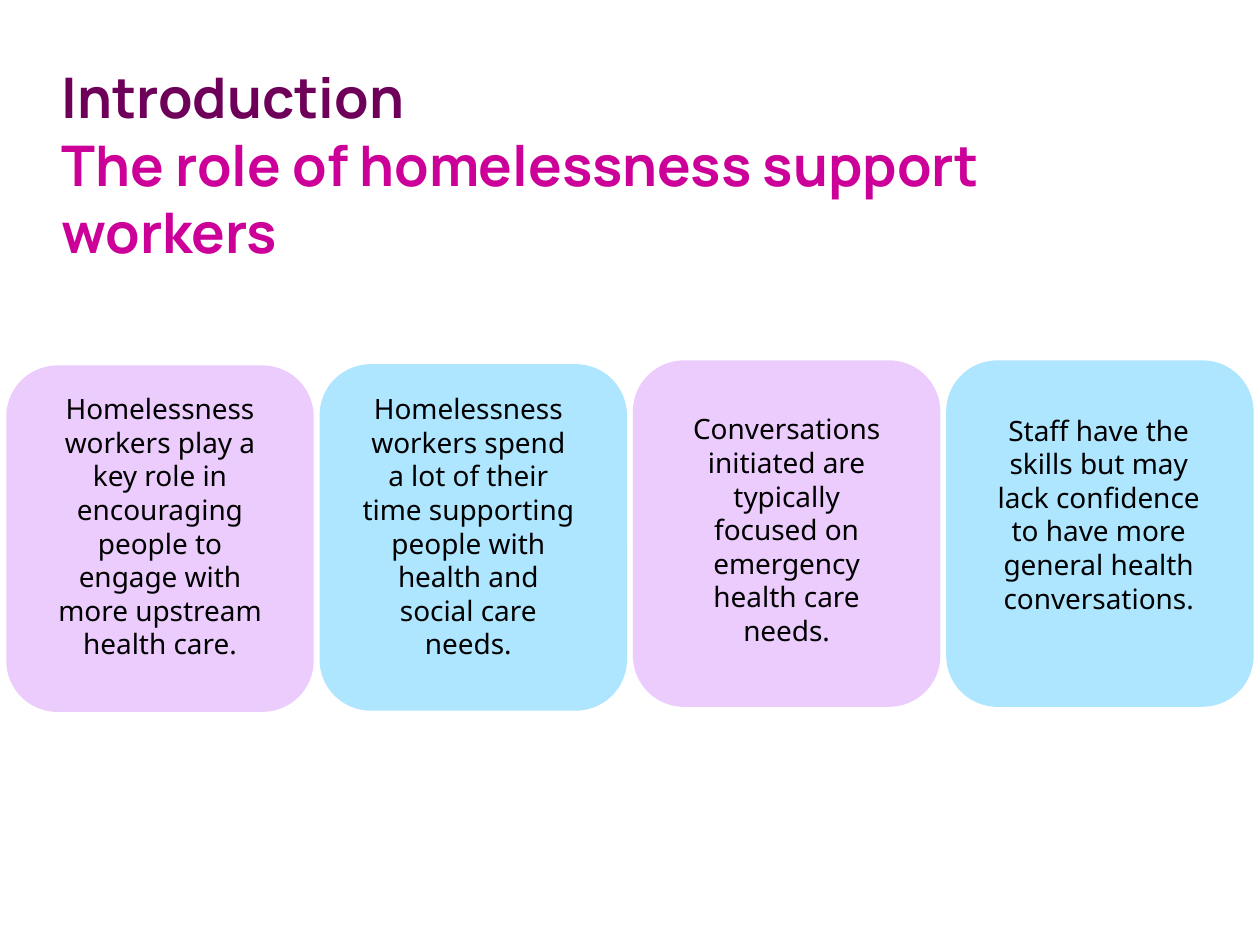
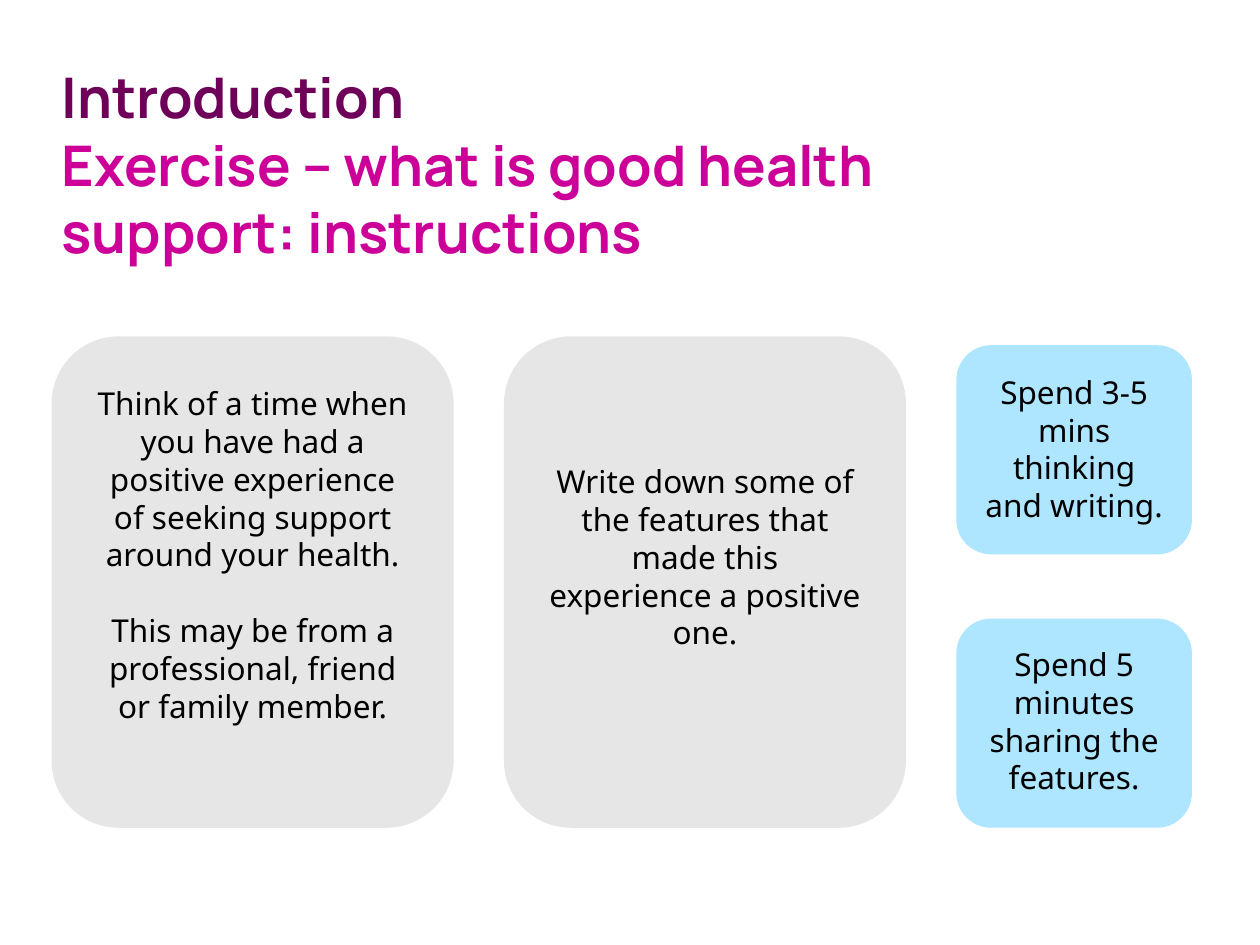
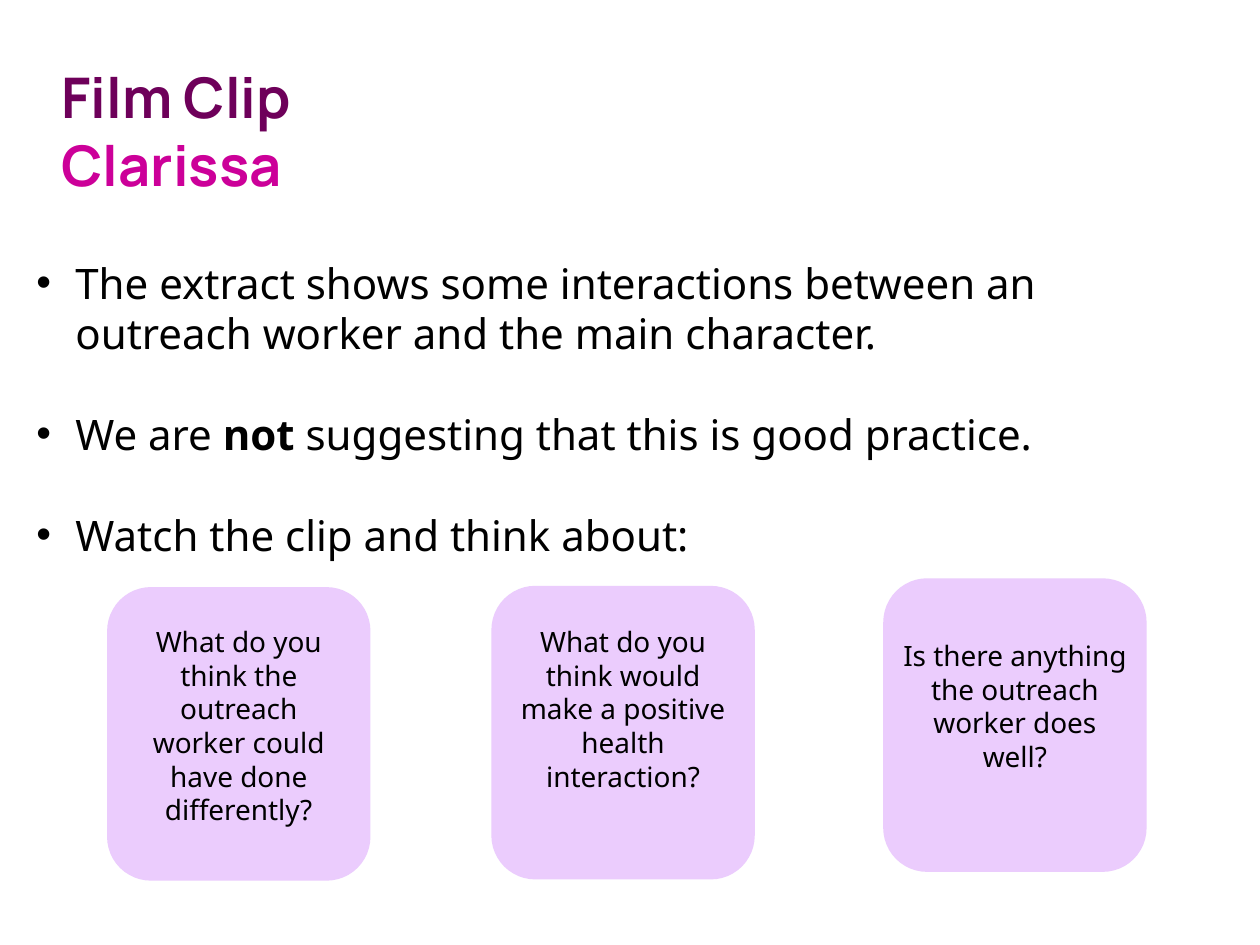
from pptx import Presentation
from pptx.dml.color import RGBColor
from pptx.enum.shapes import MSO_SHAPE
from pptx.enum.text import MSO_ANCHOR, PP_ALIGN
from pptx.oxml import parse_xml
from pptx.oxml.ns import nsdecls
from pptx.util import Inches, Pt

C = {"plum": "6E005A", "magenta": "CC0099", "lilac": "EBCCFD",
     "sky": "AEE5FF", "grey": "E6E6E6", "black": "000000"}
W, H = 10, 7.5
BODY = "Noto Sans"
HEAD = "Manrope"
LINE = 1.2


def columns(left, right, width, n):
    pitch = (right - width - left) / (n - 1)
    return [left + i * pitch for i in range(n)]


ROLE_X = columns(0.05, W - 0.05, 2.44, 4)
TASK_X = columns(0.41, 10.78, 3.19, 3)
ROLE, TASK, TIMER, QUESTION = (2.44, 2.75), (3.19, 3.9), (1.87, 1.66), (2.09, 2.33)

SLIDES = [
    {"title": ("Introduction", "The role of homelessness support workers"),
     "title_h": 2.26, "size": 16,
     "cards": [
         ("lilac", ROLE_X[0], 2.9, ROLE, (1.91, 2.24), 3.06, 0,
          ["Homelessness workers play a key role in encouraging people to engage with more upstream health care."]),
         ("sky", ROLE_X[1], 2.89, ROLE, (1.91, 2.3), 3.06, -0.04,
          ["Homelessness workers spend a lot of their time supporting people with health and social care needs."]),
         ("lilac", ROLE_X[2], 2.86, ROLE, (1.91, 2.24), 3.22, 0,
          ["Conversations initiated are typically focused on emergency health care needs."]),
         ("sky", ROLE_X[3], 2.86, ROLE, (1.91, 2.24), 3.23, -0.01,
          ["Staff have the skills but may lack confidence to have more general health conversations."]),
     ]},
    {"title": ("Introduction", "Exercise – what is good health support: instructions"),
     "title_h": 2.26, "size": 18,
     "cards": [
         ("grey", TASK_X[0], 2.67, TASK, (2.68, 3.28), 3, 0,
          ["Think of a time when you have had a positive experience of seeking support around your health.",
           "This may be from a professional, friend or family member."]),
         ("grey", TASK_X[1], 2.67, TASK, (2.68, 1.97), 3.62, 0,
          ["Write down some of the features that made this experience a positive one."]),
         ("sky", TASK_X[2], 2.74, TIMER, (1.68, 1.32), 2.91, 0,
          ["Spend 3-5 mins thinking and writing."]),
         ("sky", TASK_X[2], 4.91, TIMER, (1.68, 1.32), 5.07, 0,
          ["Spend 5 minutes sharing the features."]),
     ]},
    {"title": ("Film Clip", "Clarissa"), "title_h": 1.72, "size": 16,
     "bullets": [
         [("The extract shows some interactions between an outreach worker and the main character.", False)],
         [("We are ", False), ("not", True), (" suggesting that this is good practice.", False)],
         [("Watch the clip and think about:", False)],
     ],
     "cards": [
         ("lilac", 0.85, 4.66, QUESTION, (1.91, 1.83), 4.91, 0,
          ["What do you think the outreach worker could have done differently?"]),
         ("lilac", 3.9, 4.65, QUESTION, (1.99, 1.83), 4.91, 0,
          ["What do you think would make a positive health interaction?"]),
         ("lilac", 7.01, 4.59, QUESTION, (1.99, 1.57), 5.02, 0,
          ["Is there anything the outreach worker does well?"]),
     ]},
]


def rgb(name):
    return RGBColor.from_string(C[name])


def add_text(p, text, color="black", **font):
    r = p.add_run()
    r.text = text
    r.font.color.rgb = rgb(color)
    for key, value in font.items():
        setattr(r.font, key, value)


def text_frame(sp, **form):
    tf = sp.text_frame
    form = {"word_wrap": True, "vertical_anchor": MSO_ANCHOR.TOP, **form}
    for key, value in form.items():
        setattr(tf, key, value)
    return tf


def paragraphs(tf, items):
    for i, item in enumerate(items):
        yield i, tf.add_paragraph() if i else tf.paragraphs[0], item


def add_box(s, kind, x, y, size, color):
    sp = s.shapes.add_shape(kind, *map(Inches, (x, y, *size)))
    sp.shadow.inherit = False
    sp.fill.solid()
    sp.fill.fore_color.rgb = rgb(color)
    return sp


def add_card(s, color, x, y, size, label_size, label_y, nudge, texts, pt):
    panel = add_box(s, MSO_SHAPE.ROUNDED_RECTANGLE, x, y, size, color)
    panel.line.fill.background()
    label_x = x + (size[0] - label_size[0]) / 2 + nudge
    label = add_box(s, MSO_SHAPE.RECTANGLE, label_x, label_y, label_size, color)
    label.line.color.rgb = rgb(color)
    label.line.width = Pt(0.75)
    for i, p, text in paragraphs(text_frame(label), texts):
        p.alignment = PP_ALIGN.CENTER
        if i:
            p.space_before = Pt(pt * LINE)
        add_text(p, text, name=BODY, size=Pt(pt))


def add_title(s, title, height):
    sp = s.shapes.add_textbox(*map(Inches, (0.39, 0.45, 7.78, height)))
    p = text_frame(sp).paragraphs[0]
    font = {"name": HEAD, "size": Pt(32), "bold": True}
    add_text(p, title[0], "plum", **font)
    p.add_line_break()
    add_text(p, title[1], "magenta", **font)


def add_bullets(s, bullets, pt=24):
    sp = s.shapes.add_textbox(*map(Inches, (0.19, 1.69, 9.61, 2.83)))
    tf = text_frame(sp, margin_top=Inches(0.35))
    for i, p, runs in paragraphs(tf, bullets):
        if i:
            p.space_before = Pt(pt * LINE)
        pPr = p._p.get_or_add_pPr()
        pPr.set("marL", str(Inches(0.31)))
        pPr.set("indent", str(-Inches(0.31)))
        for tag in ('buFont %s typeface="Arial"', 'buChar %s char="•"'):
            pPr.append(parse_xml(f"<a:{tag % nsdecls('a')}/>"))
        for text, bold in runs:
            add_text(p, text, name=BODY, size=Pt(pt), bold=bold)


def main():
    prs = Presentation()
    prs.slide_width, prs.slide_height = Inches(W), Inches(H)
    for content in SLIDES:
        s = prs.slides.add_slide(prs.slide_layouts[6])
        add_title(s, content["title"], content["title_h"])
        if "bullets" in content:
            add_bullets(s, content["bullets"])
        for card in content["cards"]:
            add_card(s, *card, content["size"])
    prs.save("out.pptx")


if __name__ == "__main__":
    main()
